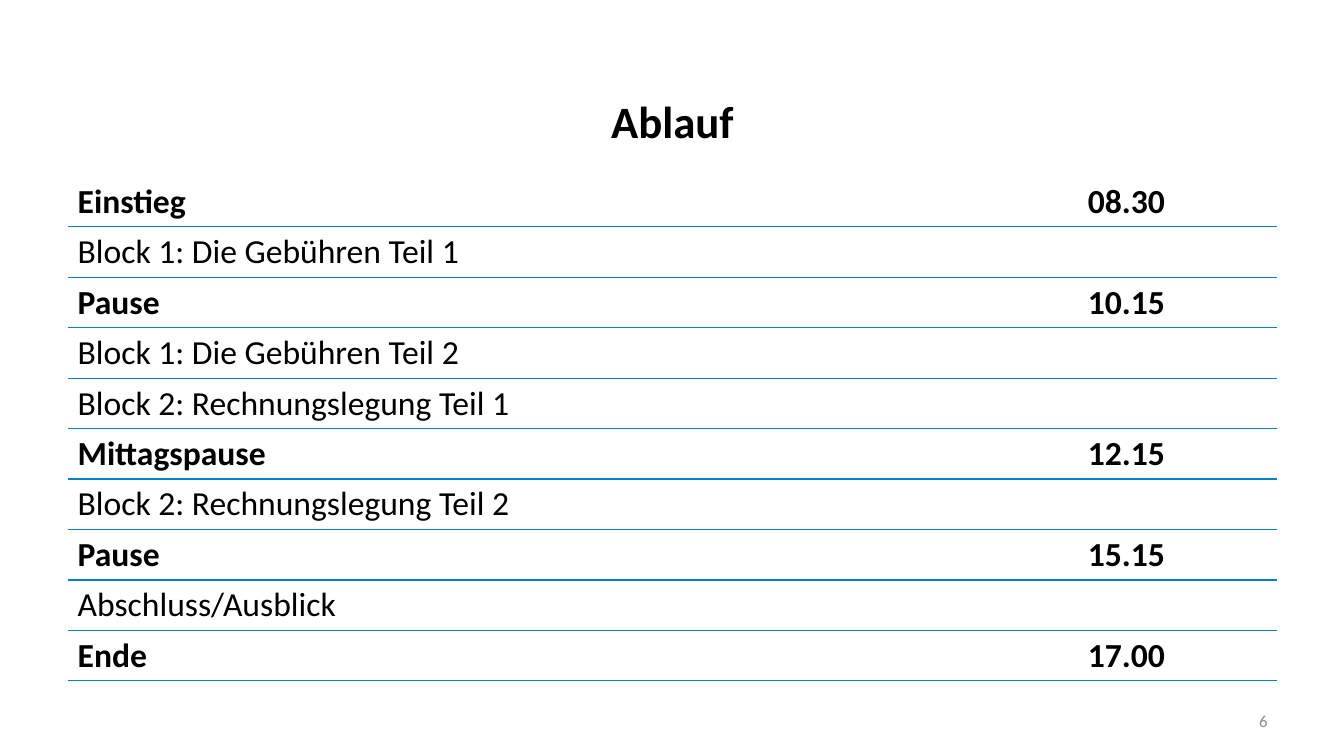
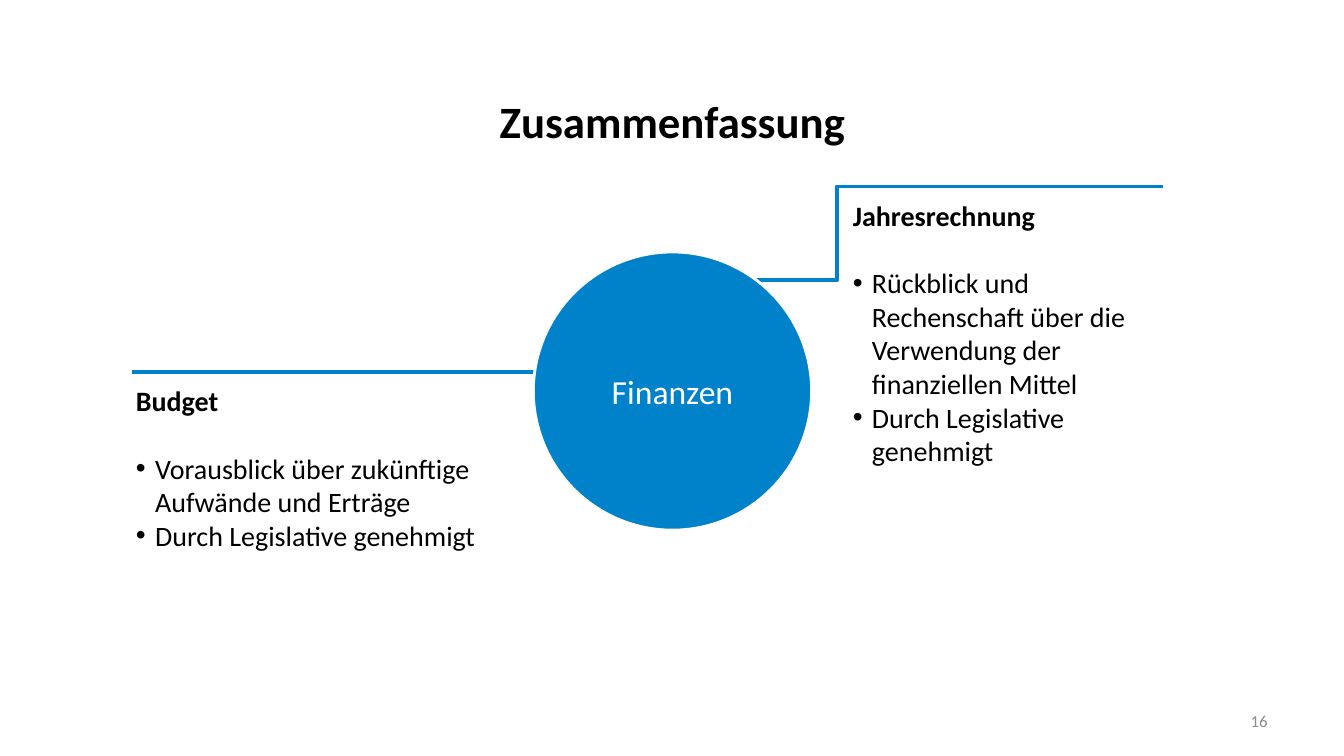
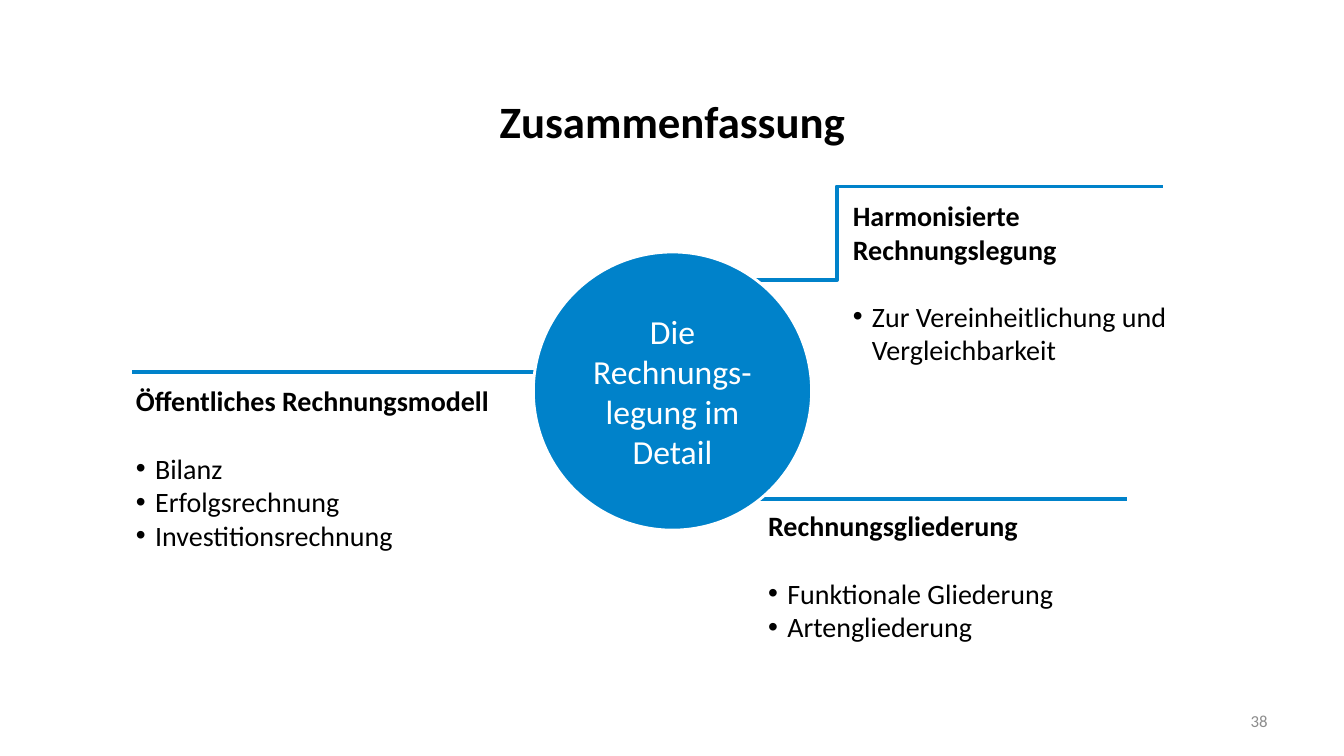
from lxml import etree
from pptx import Presentation
from pptx.dml.color import RGBColor
from pptx.enum.shapes import MSO_CONNECTOR as CONNECTOR, MSO_SHAPE as SHAPE
from pptx.enum.text import MSO_ANCHOR as ANCHOR, PP_ALIGN as ALIGN
from pptx.oxml import parse_xml
from pptx.oxml.ns import nsdecls, qn
from pptx.util import Inches, Pt

BLUE = RGBColor(0x00, 0x82, 0xCA)
GREY = RGBColor(0x8C, 0x8C, 0x8C)
BLACK = RGBColor(0x00, 0x00, 0x00)
WHITE = RGBColor(0xFF, 0xFF, 0xFF)
FONT = "Calibri"
PLAIN_TABLE_STYLE = "{2D5ABB26-0587-4C30-8999-92F81FD0307C}"

presentation = Presentation()
presentation.slide_width = Inches(13.33)
presentation.slide_height = Inches(7.5)


def format_text(paragraph, size, color=BLACK, bold=False, align=ALIGN.LEFT):
    paragraph.alignment = align
    for run in paragraph.runs:
        run.font.name = FONT
        run.font.size = Pt(size)
        run.font.bold = bold
        run.font.color.rgb = color


def add_titled_slide(title_text, number):
    slide = presentation.slides.add_slide(presentation.slide_layouts[5])
    title = slide.shapes.title
    title.left, title.top = Inches(0.67), Inches(0.84)
    title.width, title.height = Inches(12), Inches(0.71)
    title.text_frame.text = title_text
    title.text_frame.vertical_anchor = ANCHOR.MIDDLE
    format_text(title.text_frame.paragraphs[0], 32, bold=True, align=ALIGN.CENTER)

    number_box = slide.shapes.add_textbox(Inches(9.56), Inches(6.95), Inches(3.11), Inches(0.4))
    number_box.text_frame.word_wrap = True
    number_box.text_frame.text = str(number)
    number_box.text_frame.vertical_anchor = ANCHOR.MIDDLE
    format_text(number_box.text_frame.paragraphs[0], 12, GREY, align=ALIGN.RIGHT)
    return slide


# Schedule: rows with a time are bold
schedule = [
    ("Einstieg", "08.30"),
    ("Block 1: Die Gebühren Teil 1", ""),
    ("Pause", "10.15"),
    ("Block 1: Die Gebühren Teil 2", ""),
    ("Block 2: Rechnungslegung Teil 1", ""),
    ("Mittagspause", "12.15"),
    ("Block 2: Rechnungslegung Teil 2", ""),
    ("Pause", "15.15"),
    ("Abschluss/Ausblick", ""),
    ("Ende", "17.00"),
]
slide = add_titled_slide("Ablauf", 6)
table = slide.shapes.add_table(
    len(schedule), 2, Inches(0.67), Inches(1.75), Inches(12), Inches(5)
).table
table.first_row = False
table.horz_banding = False
table._tbl.tblPr.find(qn("a:tableStyleId")).text = PLAIN_TABLE_STYLE
table.columns[0].width = Inches(10.02)
table.columns[1].width = Inches(1.98)

for row, entry in zip(table.rows, schedule):
    for cell, text in zip(row.cells, entry):
        cell.fill.background()
        if text:
            cell.text_frame.text = text
            format_text(cell.text_frame.paragraphs[0], 24, bold=bool(entry[1]))
        else:
            cell.text_frame.paragraphs[0].font.size = Pt(24)
        bottom_border = parse_xml(
            f'<a:lnB {nsdecls("a")} w="{Pt(1)}"><a:solidFill>'
            f'<a:srgbClr val="{BLUE}"/></a:solidFill></a:lnB>'
        )
        cell._tc.get_or_add_tcPr().insert(0, bottom_border)

# Summaries: a topic in the circle, with headed lists around it
LEFT_BOX = (1.25, 3.76, 4.06, 2.76)
UPPER_RIGHT_BOX = (8.36, 1.92, 3.32, 2.54)
LOWER_RIGHT_BOX = (7.52, 5, 3.66, 1.75)

LEFT_LINE = (CONNECTOR.STRAIGHT, 1.31, 3.69, 5.61, 3.69)
LOWER_RIGHT_LINE = (CONNECTOR.STRAIGHT, 7.36, 4.95, 11.18, 4.95)
UPPER_RIGHT_BEND = (CONNECTOR.ELBOW, 9.74, 1.85, 6.86, 2.78)
UPPER_RIGHT_LINE = (CONNECTOR.STRAIGHT, 8.74, 1.85, 11.53, 1.85)
COMMON_LINES = [LEFT_LINE, UPPER_RIGHT_BEND, UPPER_RIGHT_LINE]

summaries = [
    (16, "Finanzen", COMMON_LINES, [
        (UPPER_RIGHT_BOX, "Jahresrechnung", [
            "Rückblick und Rechenschaft über die Verwendung der finanziellen Mittel",
            "Durch Legislative genehmigt",
        ]),
        (LEFT_BOX, "Budget", [
            "Vorausblick über zukünftige Aufwände und Erträge",
            "Durch Legislative genehmigt",
        ]),
    ]),
    (38, "Die Rechnungs-legung im Detail", COMMON_LINES + [LOWER_RIGHT_LINE], [
        (LOWER_RIGHT_BOX, "Rechnungsgliederung", ["Funktionale Gliederung", "Artengliederung"]),
        (UPPER_RIGHT_BOX, "Harmonisierte Rechnungslegung", [
            "Zur Vereinheitlichung und Vergleichbarkeit",
        ]),
        (LEFT_BOX, "Öffentliches Rechnungsmodell", [
            "Bilanz", "Erfolgsrechnung", "Investitionsrechnung",
        ]),
    ]),
]

for number, topic, lines, sections in summaries:
    slide = add_titled_slide("Zusammenfassung", number)

    # Headed lists, the left one on a white panel
    for box, heading, items in sections:
        lengths = [Inches(length) for length in box]
        if box == LEFT_BOX:
            list_box = slide.shapes.add_shape(SHAPE.RECTANGLE, *lengths)
            list_box.shadow.inherit = False
            list_box.fill.solid()
            list_box.fill.fore_color.rgb = WHITE
            list_box.line.fill.background()
        else:
            list_box = slide.shapes.add_textbox(*lengths)
        text_frame = list_box.text_frame
        text_frame.word_wrap = True
        text_frame.vertical_anchor = ANCHOR.TOP
        text_frame.text = heading
        format_text(text_frame.paragraphs[0], 20, bold=True)
        for index, item in enumerate(items):
            paragraph = text_frame.add_paragraph()
            paragraph.text = item
            format_text(paragraph, 20)
            if index == 0:
                paragraph.space_before = Pt(24)
            properties = paragraph._p.get_or_add_pPr()
            properties.set("marL", str(Inches(0.19)))
            properties.set("indent", str(-Inches(0.19)))
            etree.SubElement(properties, qn("a:buFont")).set("typeface", "Arial")
            etree.SubElement(properties, qn("a:buChar")).set("char", "•")

    # Lines to the circle
    for kind, *ends in lines:
        connector = slide.shapes.add_connector(kind, *[Inches(length) for length in ends])
        connector.line.color.rgb = BLUE
        connector.line.width = Pt(2.75)
        etree.SubElement(connector._element.spPr, qn("a:effectLst"))

    # Circle
    circle = slide.shapes.add_shape(
        SHAPE.OVAL, Inches(5.29), Inches(2.5), Inches(2.76), Inches(2.76)
    )
    circle.shadow.inherit = False
    circle.fill.solid()
    circle.fill.fore_color.rgb = BLUE
    circle.line.color.rgb = WHITE
    circle.line.width = Pt(2)
    text_frame = circle.text_frame
    text_frame.margin_left = text_frame.margin_right = 0
    text_frame.margin_top = text_frame.margin_bottom = 0
    text_frame.word_wrap = True
    text_frame.vertical_anchor = ANCHOR.MIDDLE
    text_frame.text = topic
    text_frame.paragraphs[0].space_before = Pt(5)
    format_text(text_frame.paragraphs[0], 24, WHITE, align=ALIGN.CENTER)

presentation.save("out.pptx")
